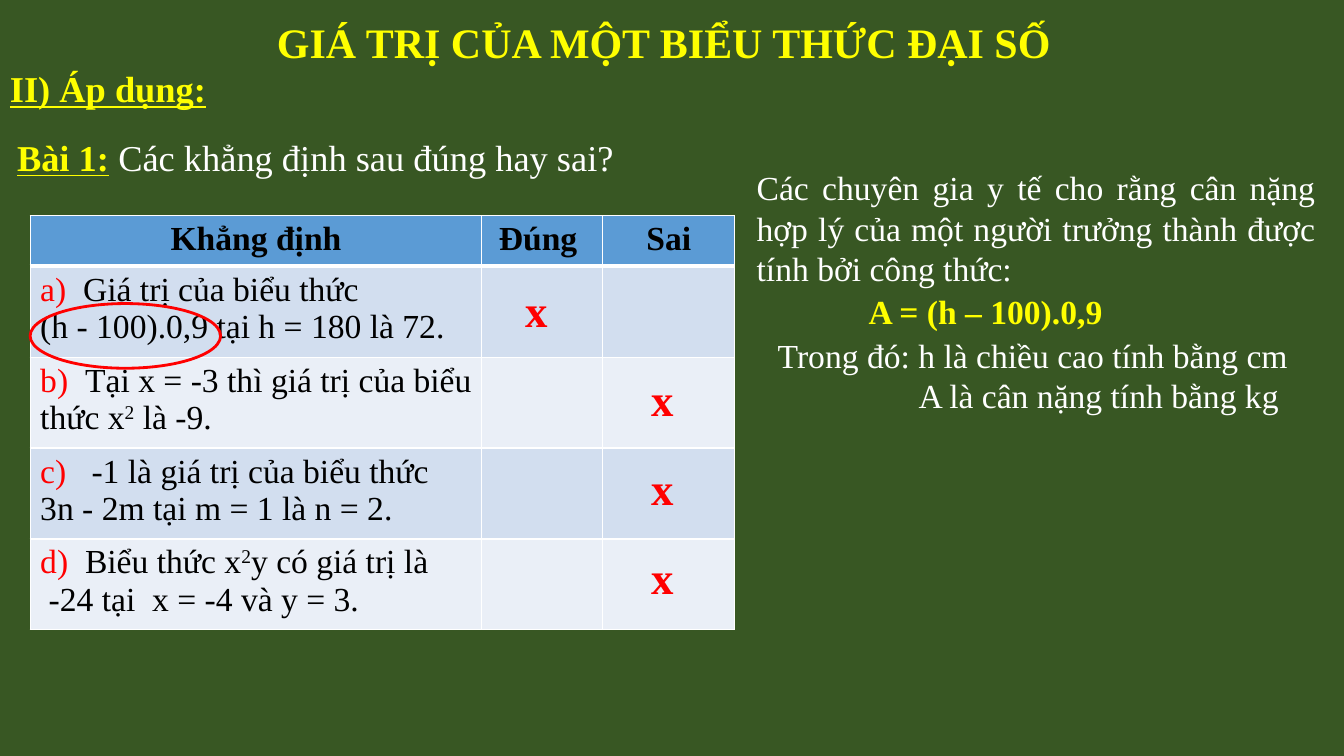
from lxml import etree
from pptx import Presentation
from pptx.dml.color import RGBColor
from pptx.enum.shapes import MSO_SHAPE
from pptx.enum.text import MSO_AUTO_SIZE, PP_ALIGN
from pptx.oxml.ns import qn
from pptx.util import Cm, Pt

ELLIPSE = MSO_SHAPE.OVAL
GROW = MSO_AUTO_SIZE.SHAPE_TO_FIT_TEXT
LEFT, CENTER, JUSTIFY = PP_ALIGN.LEFT, PP_ALIGN.CENTER, PP_ALIGN.JUSTIFY

GREEN, YELLOW, WHITE, BLACK, RED = "385723", "FFFF00", "FFFFFF", "000000", "FF0000"
HEADER_FILL, BAND_FILLS = "5B9BD5", ("D2DEEF", "EAEFF7")

TITLE = {"size": Pt(30), "bold": True, "color": YELLOW}
SECTION = {"size": Pt(26), "bold": True, "underline": True, "color": YELLOW}
SECTION_GAP = {"size": Pt(26), "bold": True, "color": YELLOW}
QUESTION = {"size": Pt(26), "color": WHITE}
BODY = {"size": Pt(24), "color": WHITE}
FORMULA = {"size": Pt(24), "bold": True, "color": YELLOW}
HEADER = {"size": Pt(24), "bold": True, "color": BLACK}
LABEL = {"size": Pt(24), "bold": False, "color": RED}
CLAIM = {"size": Pt(24), "bold": False, "color": BLACK}
POWER = {**CLAIM, "raised": True}
MARK = {"size": Pt(32), "bold": True, "color": RED}

COLUMN_WIDTHS = (11.38, 3.05, 3.33)
HEADER_HEIGHT, ROW_HEIGHT = 1.25, 2.29
HEADINGS = ("Khẳng định", "Đúng ", "Sai")
CLAIMS = (
    ([[("a)  ", LABEL), ("Giá trị của biểu thức ", CLAIM)],
      [("(h - 100).0,9 tại h = 180 là 72.", CLAIM)]], 1),
    ([[("b)  ", LABEL), ("Tại x = -3 thì giá trị của biểu thức x", CLAIM),
       ("2", POWER), (" là -9.", CLAIM)]], 2),
    ([[("c)   ", LABEL), ("-1 là giá trị của biểu thức ", CLAIM)],
      [("3n - 2m tại m = 1 là n = 2.", CLAIM)]], 2),
    ([[("d)  ", LABEL), ("Biểu thức x", CLAIM), ("2", POWER), ("y có giá trị là ", CLAIM)],
      [(" -24 tại  x = -4 và y = 3.", CLAIM)]], 2),
)


def color(value):
    return RGBColor.from_string(value)


def write(frame, lines, align=LEFT):
    for index, spans in enumerate(lines):
        para = frame.paragraphs[0] if index == 0 else frame.add_paragraph()
        para.alignment = align
        for text, style in spans:
            span = para.add_run()
            span.text = text
            span.font.name = "Times New Roman"
            for name, value in style.items():
                if name == "color":
                    span.font.color.rgb = color(value)
                elif name == "raised":
                    span.font._element.set("baseline", "30000")
                else:
                    setattr(span.font, name, value)


def add_text(page, box, lines, align=LEFT, wrap=True):
    frame = page.shapes.add_textbox(*map(Cm, box)).text_frame
    frame.word_wrap = wrap
    frame.auto_size = GROW
    write(frame, lines, align)
    return frame


def style_cell(cell, fill, bottom_width):
    properties = cell._tc.get_or_add_tcPr()
    for side, width in (("L", 1), ("R", 1), ("T", 1), ("B", bottom_width)):
        border = etree.SubElement(properties, qn(f"a:ln{side}"), w=str(Pt(width)))
        solid = etree.SubElement(border, qn("a:solidFill"))
        etree.SubElement(solid, qn("a:srgbClr"), val=WHITE)
    cell.fill.solid()
    cell.fill.fore_color.rgb = color(fill)


def draw_headings(page, box):
    left, top, width, height = box
    add_text(page, (left, top + 1.55, 5.66, 1.37), [[("II) Áp dụng:", SECTION)]], wrap=False)
    add_text(page, (left + 6.73, top + 0.28, 20.2, 1.55),
             [[("GIÁ TRỊ CỦA MỘT BIỂU THỨC ĐẠI SỐ", TITLE)]], wrap=False)
    add_text(page, (left + 0.18, top + 3.28, 23.1, 1.37),
             [[("Bài 1:", SECTION), (" ", SECTION_GAP),
               ("Các khẳng định sau đúng hay sai?", QUESTION)]])


def draw_claims(page, box):
    left, top, width, height = box
    table = page.shapes.add_table(len(CLAIMS) + 1, len(HEADINGS), *map(Cm, box)).table
    for column, column_width in zip(table.columns, COLUMN_WIDTHS):
        column.width = Cm(column_width)
    for index, row in enumerate(table.rows):
        row.height = Cm(ROW_HEIGHT if index else HEADER_HEIGHT)
        for cell in row.cells:
            fill = BAND_FILLS[(index - 1) % 2] if index else HEADER_FILL
            style_cell(cell, fill, 1 if index else 3)
    for column, heading in enumerate(HEADINGS):
        write(table.cell(0, column).text_frame, [[(heading, HEADER)]], CENTER)
    for index, (lines, answer) in enumerate(CLAIMS):
        write(table.cell(index + 1, 0).text_frame, lines, JUSTIFY)
        middle = left + sum(COLUMN_WIDTHS[:answer]) + COLUMN_WIDTHS[answer] / 2
        mark_box = (middle - 1.46, top + 1.57 + 2.24 * index, 2.62, 1.63)
        add_text(page, mark_box, [[("x", MARK)]], CENTER)

    ring = page.shapes.add_shape(ELLIPSE, *map(Cm, (left, top + 2.21, 4.8, 1.63)))
    ring.shadow.inherit = False
    ring.fill.background()
    ring.line.color.rgb = color(RED)
    ring.line.width = Pt(2)


def draw_formula(page, box):
    left, top, width, height = box
    add_text(page, (left + 2.82, top + 3.12, 8.08, 1.27), [[("A = (h – 100).0,9", FORMULA)]])
    add_text(page, (left, top, width, 3.33),
             [[("Các chuyên gia y tế cho rằng cân nặng hợp lý của một người "
                "trưởng thành được tính bởi công thức:", BODY)]], JUSTIFY)
    frame = add_text(page, (left + 0.53, top + 4.22, 13.74, 2.31),
                     [[("Trong đó: h là chiều cao tính bằng cm", BODY)],
                      [("A là cân nặng tính bằng kg", BODY)]], JUSTIFY)
    frame.paragraphs[1]._p.get_or_add_pPr().set("marL", str(Cm(3.55)))


def main():
    deck = Presentation()
    deck.slide_width, deck.slide_height = Cm(33.87), Cm(19.05)
    page = deck.slides.add_slide(deck.slide_layouts[6])
    page.background.fill.solid()
    page.background.fill.fore_color.rgb = color(GREEN)
    draw_headings(page, (0, 0, 33.87, 4.65))
    draw_claims(page, (0.76, 5.44, sum(COLUMN_WIDTHS), HEADER_HEIGHT + 4 * ROW_HEIGHT))
    draw_formula(page, (18.82, 4.09, 14.58, 6.53))
    deck.save("out.pptx")


if __name__ == "__main__":
    main()
